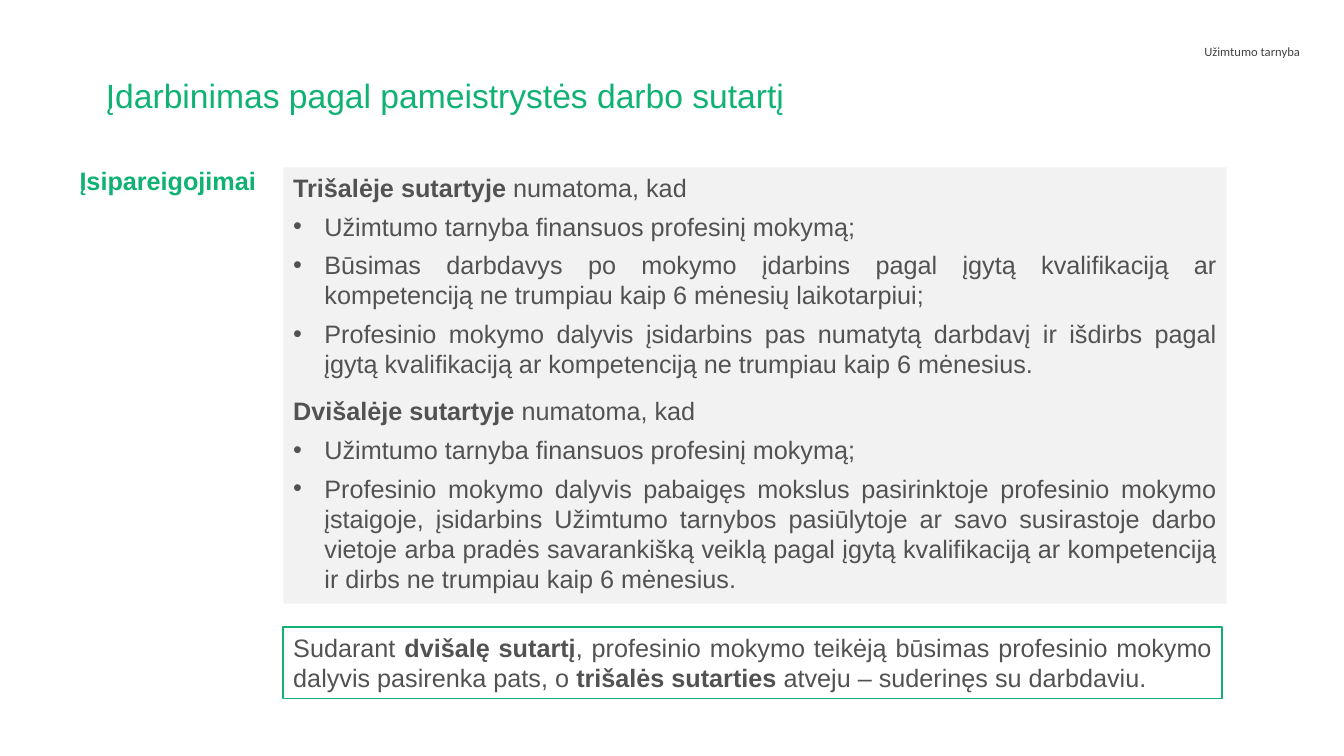
from dataclasses import dataclass

from lxml import etree
from pptx import Presentation
from pptx.dml.color import RGBColor
from pptx.enum.shapes import MSO_SHAPE
from pptx.enum.text import MSO_ANCHOR, MSO_AUTO_SIZE, PP_ALIGN
from pptx.oxml.ns import qn
from pptx.util import Inches, Pt

RECTANGLE = MSO_SHAPE.RECTANGLE
TOP = MSO_ANCHOR.TOP
NO_AUTOFIT = MSO_AUTO_SIZE.NONE
LEFT, RIGHT, JUSTIFY = PP_ALIGN.LEFT, PP_ALIGN.RIGHT, PP_ALIGN.JUSTIFY
SLIDE_WIDTH, SLIDE_HEIGHT = Inches(13.33), Inches(7.5)
BULLET_INDENT = Inches(0.31)


@dataclass(frozen=True)
class Theme:
    green: RGBColor = RGBColor(0x0F, 0xB2, 0x73)
    border: RGBColor = RGBColor(0x13, 0xAF, 0x73)
    panel: RGBColor = RGBColor(0xF2, 0xF2, 0xF2)
    text: RGBColor = RGBColor(0x52, 0x52, 0x52)
    header: RGBColor = RGBColor(0x43, 0x42, 0x44)
    font: str = "Arial"
    header_font: str = "Calibri"
    title_size: int = 24
    body_size: int = 18
    header_size: int = 9
    border_width: float = 1.25
    item_gap: int = 6
    group_gap: int = 12


THEME = Theme()

AGREEMENTS = [
    ("Trišalėje sutartyje ", [
        "Užimtumo tarnyba finansuos profesinį mokymą;",
        "Būsimas darbdavys po mokymo įdarbins pagal įgytą kvalifikaciją ar "
        "kompetenciją ne trumpiau kaip 6 mėnesių laikotarpiui;",
        "Profesinio mokymo dalyvis įsidarbins pas numatytą darbdavį ir išdirbs "
        "pagal įgytą kvalifikaciją ar kompetenciją ne trumpiau kaip 6 mėnesius.",
    ]),
    ("Dvišalėje sutartyje ", [
        "Užimtumo tarnyba finansuos profesinį mokymą;",
        "Profesinio mokymo dalyvis pabaigęs mokslus pasirinktoje profesinio "
        "mokymo įstaigoje, įsidarbins Užimtumo tarnybos pasiūlytoje ar savo "
        "susirastoje darbo vietoje arba pradės savarankišką veiklą pagal įgytą "
        "kvalifikaciją ar kompetenciją ir dirbs ne trumpiau kaip 6 mėnesius.",
    ]),
]

PROVIDER_CHOICE = [
    ("Sudarant ", False),
    ("dvišalę sutartį", True),
    (", profesinio mokymo teikėją būsimas profesinio mokymo dalyvis "
     "pasirenka pats, o ", False),
    ("trišalės sutarties ", True),
    ("atveju – suderinęs su darbdaviu.", False),
]


def percent_box(left, top, width, height):
    return (int(SLIDE_WIDTH * left / 100), int(SLIDE_HEIGHT * top / 100),
            int(SLIDE_WIDTH * width / 100), int(SLIDE_HEIGHT * height / 100))


def style_run(run, color, size=THEME.body_size, font=THEME.font, bold=False):
    run.font.name = font
    run.font.size = Pt(size)
    run.font.color.rgb = color
    run.font.bold = bold


def write_runs(paragraph, pieces, gap):
    paragraph.alignment = JUSTIFY
    paragraph.space_after = Pt(gap)
    for words, bold in pieces:
        run = paragraph.add_run()
        run.text = words
        style_run(run, THEME.text, bold=bold)


def add_bullet(paragraph):
    properties = paragraph._p.get_or_add_pPr()
    properties.set("marL", str(BULLET_INDENT))
    properties.set("indent", str(-BULLET_INDENT))
    etree.SubElement(properties, qn("a:buFont")).set("typeface", "Arial")
    etree.SubElement(properties, qn("a:buChar")).set("char", "•")


def add_label(slide, box, words, align, **style):
    label = slide.shapes.add_textbox(*box).text_frame
    label.word_wrap = True
    label.text = words
    label.paragraphs[0].alignment = align
    style_run(label.paragraphs[0].runs[0], **style)


def add_title(slide, box, words):
    title = slide.shapes.title
    title.left, title.top, title.width, title.height = box
    frame = title.text_frame
    frame.text = words
    frame.auto_size = NO_AUTOFIT
    frame.vertical_anchor = TOP
    paragraph = frame.paragraphs[0]
    paragraph.alignment = LEFT
    paragraph.line_spacing = 0.9
    style_run(paragraph.runs[0], THEME.green, THEME.title_size)


def add_panel(slide, box, fill=None, border=None):
    panel = slide.shapes.add_shape(RECTANGLE, *box)
    panel.shadow.inherit = False
    if fill is None:
        panel.fill.background()
    else:
        panel.fill.solid()
        panel.fill.fore_color.rgb = fill
    if border is None:
        panel.line.fill.background()
    else:
        panel.line.color.rgb = border
        panel.line.width = Pt(THEME.border_width)
    panel.text_frame.word_wrap = True
    panel.text_frame.vertical_anchor = TOP
    return panel.text_frame


def add_agreements(slide, box):
    frame = add_panel(slide, box, fill=THEME.panel)
    paragraph = frame.paragraphs[0]
    for number, (agreement, duties) in enumerate(AGREEMENTS, 1):
        if number > 1:
            paragraph = frame.add_paragraph()
        write_runs(paragraph, [(agreement, True), ("numatoma, kad", False)],
                   THEME.item_gap)
        for position, duty in enumerate(duties, 1):
            closes_group = position == len(duties) and number < len(AGREEMENTS)
            duty_line = frame.add_paragraph()
            write_runs(duty_line, [(duty, False)],
                       THEME.group_gap if closes_group else THEME.item_gap)
            add_bullet(duty_line)


def add_provider_note(slide, box):
    frame = add_panel(slide, box, border=THEME.border)
    write_runs(frame.paragraphs[0], PROVIDER_CHOICE, THEME.group_gap)


def main():
    deck = Presentation()
    deck.slide_width, deck.slide_height = SLIDE_WIDTH, SLIDE_HEIGHT
    slide = deck.slides.add_slide(deck.slide_layouts[5])
    add_label(slide, percent_box(63.7, 5.2, 33.75, 6.27), "Užimtumo tarnyba",
              RIGHT, color=THEME.header, size=THEME.header_size,
              font=THEME.header_font)
    add_title(slide, percent_box(7.13, 9.87, 85.8, 10),
              "Įdarbinimas pagal pameistrystės darbo sutartį")
    add_label(slide, percent_box(5.18, 21.2, 19.28, 5.33), "Įsipareigojimai",
              LEFT, color=THEME.green, bold=True)
    add_agreements(slide, percent_box(21.08, 22.13, 70.2, 57.73))
    add_provider_note(slide, percent_box(21.08, 82.93, 69.83, 9.47))
    deck.save("out.pptx")


if __name__ == "__main__":
    main()
